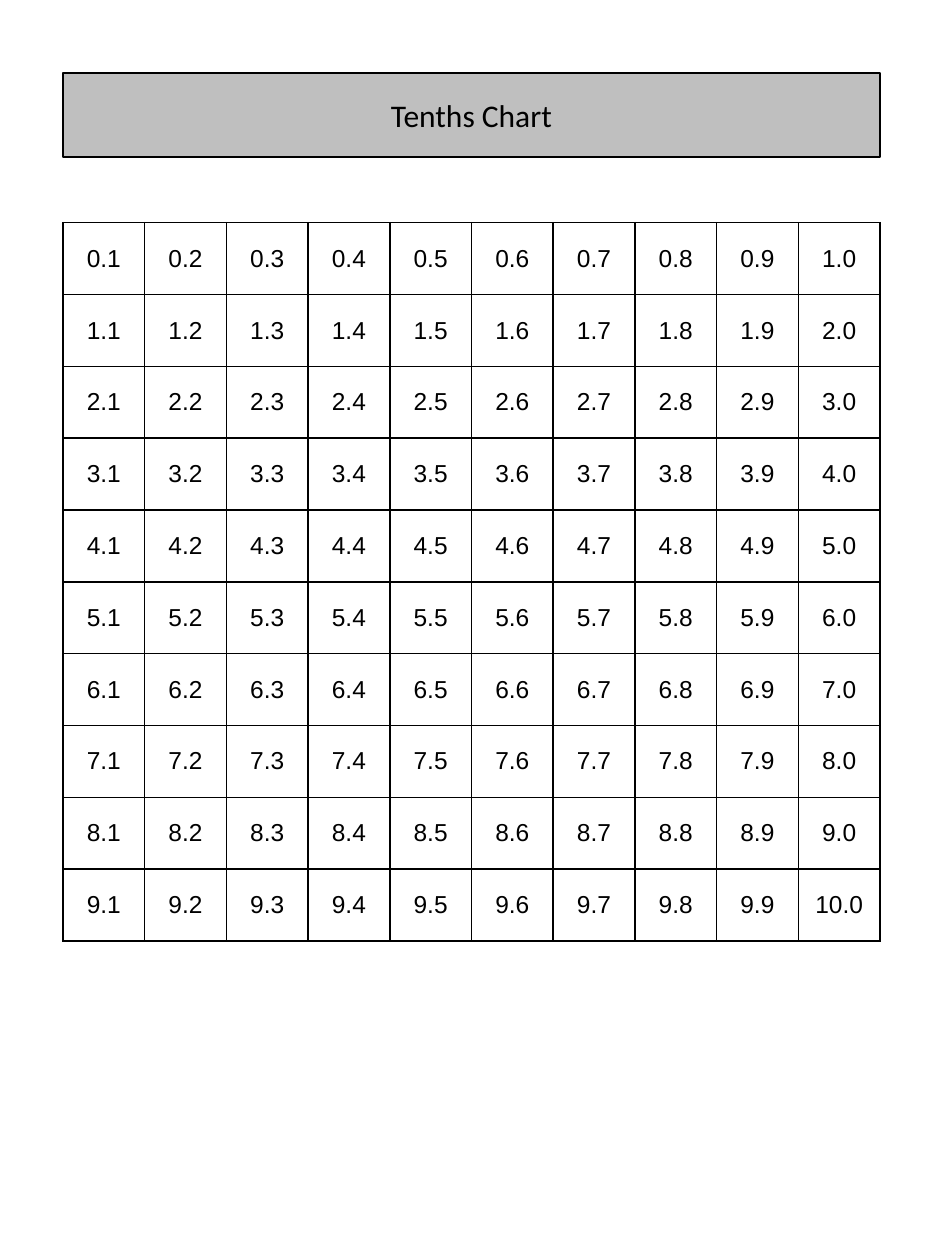
from dataclasses import dataclass

from lxml.etree import SubElement
from pptx import Presentation
from pptx.dml.color import RGBColor
from pptx.enum.shapes import MSO_SHAPE
from pptx.enum.text import MSO_ANCHOR, PP_ALIGN
from pptx.oxml.ns import qn
from pptx.util import Cm, Pt


@dataclass(frozen=True)
class Theme:
    ink: str = "000000"
    banner: str = "BFBFBF"
    title_font: str = "Calibri"
    title_size: int = 18
    cell_font: str = "Arial"
    cell_size: int = 14
    line: int = 1


class Sheet:
    def __init__(self, slide, theme):
        self.s = slide
        self.theme = theme

    def label(self, tf, text, font, size):
        p = tf.paragraphs[0]
        p.alignment = PP_ALIGN.CENTER
        r = p.add_run()
        r.text = text
        for name, value in {"name": font, "size": Pt(size), "bold": False}.items():
            setattr(r.font, name, value)
        r.font.color.rgb = RGBColor.from_string(self.theme.ink)

    def banner(self, text, left, top, width, height):
        t = self.theme
        sp = self.s.shapes.add_shape(MSO_SHAPE.RECTANGLE, left, top, width, height)
        sp.shadow.inherit = False
        sp.fill.solid()
        sp.fill.fore_color.rgb = RGBColor.from_string(t.banner)
        sp.line.color.rgb = RGBColor.from_string(t.ink)
        sp.line.width = Pt(t.line)
        sp.text_frame.vertical_anchor = MSO_ANCHOR.MIDDLE
        self.label(sp.text_frame, text, t.title_font, t.title_size)

    def border(self, cell):
        tcPr = cell._tc.get_or_add_tcPr()
        for side in ("lnL", "lnR", "lnT", "lnB"):
            ln = SubElement(tcPr, qn(f"a:{side}"), w=str(Pt(self.theme.line)))
            fill = SubElement(ln, qn("a:solidFill"))
            SubElement(fill, qn("a:srgbClr"), val=self.theme.ink)

    def grid(self, rows, left, top, width, height):
        t = self.theme
        table = self.s.shapes.add_table(
            len(rows), len(rows[0]), left, top, width, height).table
        for name, value in {"first_row": False, "horz_banding": False}.items():
            setattr(table, name, value)
        for i, row in enumerate(rows):
            for j, text in enumerate(row):
                cell = table.cell(i, j)
                self.border(cell)
                cell.fill.background()
                cell.vertical_anchor = MSO_ANCHOR.MIDDLE
                self.label(cell.text_frame, text, t.cell_font, t.cell_size)


def main():
    prs = Presentation()
    prs.slide_width, prs.slide_height = Cm(19.05), Cm(25.4)
    sheet = Sheet(prs.slides.add_slide(prs.slide_layouts[6]), Theme())
    left, width = Cm(1.27), Cm(16.47)

    # Number grid: 0.1 to 10.0, ten tenths per row
    tenths = [[f"{(10 * i + j) / 10:.1f}" for j in range(1, 11)] for i in range(10)]
    sheet.grid(tenths, left, Cm(4.49), width, Cm(14.48))

    # Title banner
    sheet.banner("Tenths Chart", left, Cm(1.48), width, Cm(1.69))

    prs.save("out.pptx")


if __name__ == "__main__":
    main()
